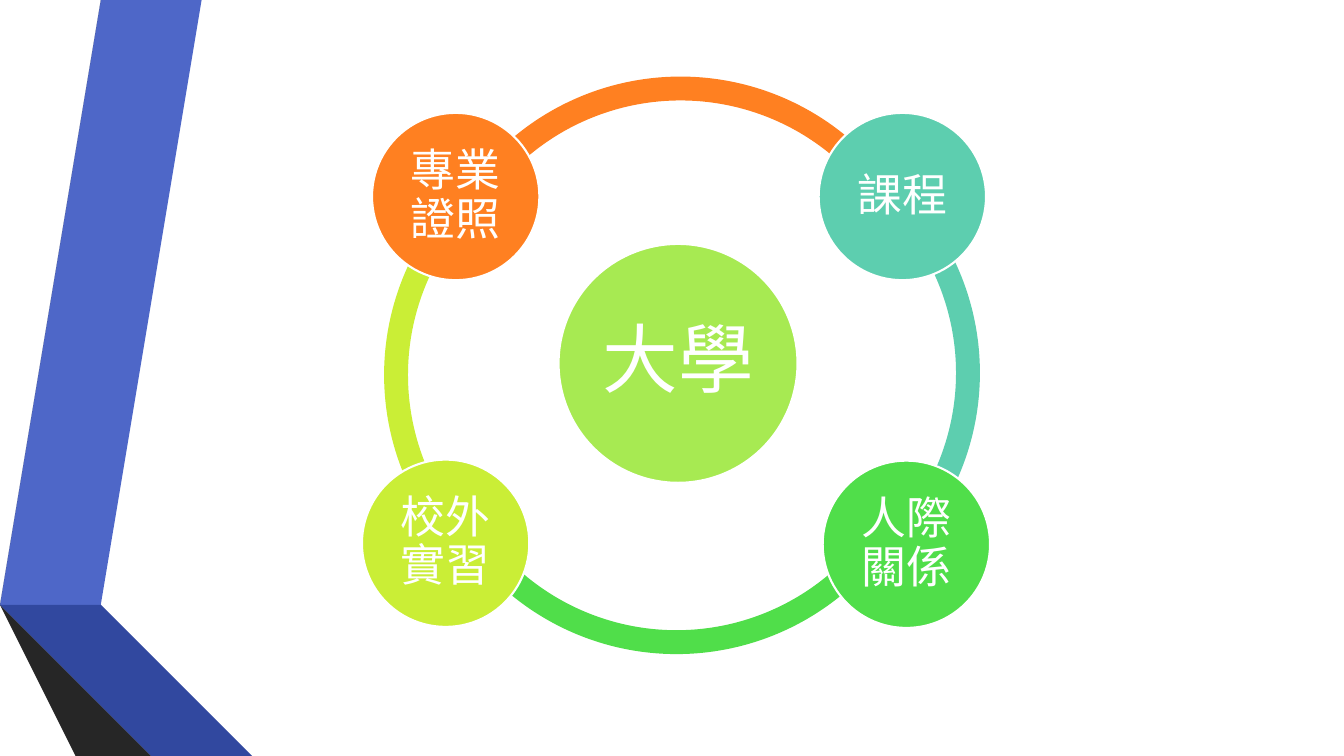
import pptx
import pptx.util
import pptx.dml.color
import pptx.enum.shapes
import pptx.enum.text

Inches = pptx.util.Inches
SHAPE = pptx.enum.shapes.MSO_SHAPE


def color(hex_text):
    return pptx.dml.color.RGBColor.from_string(hex_text)


def paint(shape, fill):
    shape.shadow.inherit = False
    shape.fill.solid()
    shape.fill.fore_color.rgb = color(fill)
    shape.line.fill.background()


deck = pptx.Presentation()
deck.slide_width = Inches(13.33)
deck.slide_height = Inches(7.5)
page = deck.slides.add_slide(deck.slide_layouts[6])

# Folded ribbons on the left edge
ribbons = [
    ("4E67C8", [(0.5, 5.78), (0.77, 5.83), (1.73, 0), (1.45, 0)]),
    ("595959", [(1.39, 0), (1.11, 0), (0.16, 5.73), (0.44, 5.77)]),
    ("262626", [(0.16, 5.73), (1.45, 7.5), (1.51, 7.5)]),
    ("21306A", [(0.5, 5.79), (2.08, 7.5), (2.14, 7.5)]),
    ("31489F", [(0.5, 5.79), (2.14, 7.5), (2.83, 7.5), (0.77, 5.83), (0.5, 5.78)]),
    ("404040", [(2.02, 7.5), (0.48, 5.83), (0.43, 5.78), (0.44, 5.77),
                (0.16, 5.73), (1.51, 7.5)]),
]
for fill, points in ribbons:
    builder = page.shapes.build_freeform(*points[0], scale=Inches(1))
    builder.add_line_segments(points[1:], close=True)
    paint(builder.convert_to_shape(), fill)

# Ring of four arcs: left, top, start angle, end angle, fill
arcs = [
    (4.17, 0.76, 208.34, 331.53, "FF8021"),
    (3.81, 1.14, 138.75, 224.73, "CAEE36"),
    (4.13, 1.33, 24.82, 155.42, "50DE4A"),
    (4.56, 1.12, 316.11, 42.51, "5DCEAF"),
]
for left, top, start, end, fill in arcs:
    arc = page.shapes.add_shape(SHAPE.BLOCK_ARC, Inches(left), Inches(top),
                                Inches(5.16), Inches(5.16))
    # Angles are stored in 60000ths of a degree, adjustments in 100000ths
    arc.adjustments[0] = start * 0.6
    arc.adjustments[1] = end * 0.6
    arc.adjustments[2] = 0.046
    paint(arc, fill)

# Centre and satellite circles: text, left, top, diameter, inset, size, fill
circles = [
    ("大學", 5.54, 2.42, 2.37, 0.07, 54, "A7EA52"),
    ("課程", 8.12, 1.12, 1.66, 0.04, 32, "5DCEAF"),
    ("人際關係", 8.16, 4.57, 1.66, 0.04, 32, "50DE4A"),
    ("校外實習", 3.59, 4.56, 1.66, 0.04, 32, "CAEE36"),
    ("專業證照", 3.69, 1.12, 1.66, 0.04, 32, "FF8021"),
]
for text, left, top, diameter, inset, size, fill in circles:
    circle = page.shapes.add_shape(SHAPE.OVAL, Inches(left), Inches(top),
                                   Inches(diameter), Inches(diameter))
    paint(circle, fill)
    circle.line.color.rgb = color("FFFFFF")
    circle.line.width = pptx.util.Pt(1.5)

    frame = circle.text_frame
    frame.text = text
    frame.word_wrap = True
    frame.vertical_anchor = pptx.enum.text.MSO_ANCHOR.MIDDLE
    frame.margin_left = frame.margin_right = Inches(inset)
    frame.margin_top = frame.margin_bottom = Inches(inset)
    para = frame.paragraphs[0]
    para.alignment = pptx.enum.text.PP_ALIGN.CENTER
    para.line_spacing = 0.9
    span = para.runs[0]
    span.font.name = "Calibri"
    span.font.size = pptx.util.Pt(size)
    span.font.color.rgb = color("FFFFFF")

deck.save("out.pptx")
